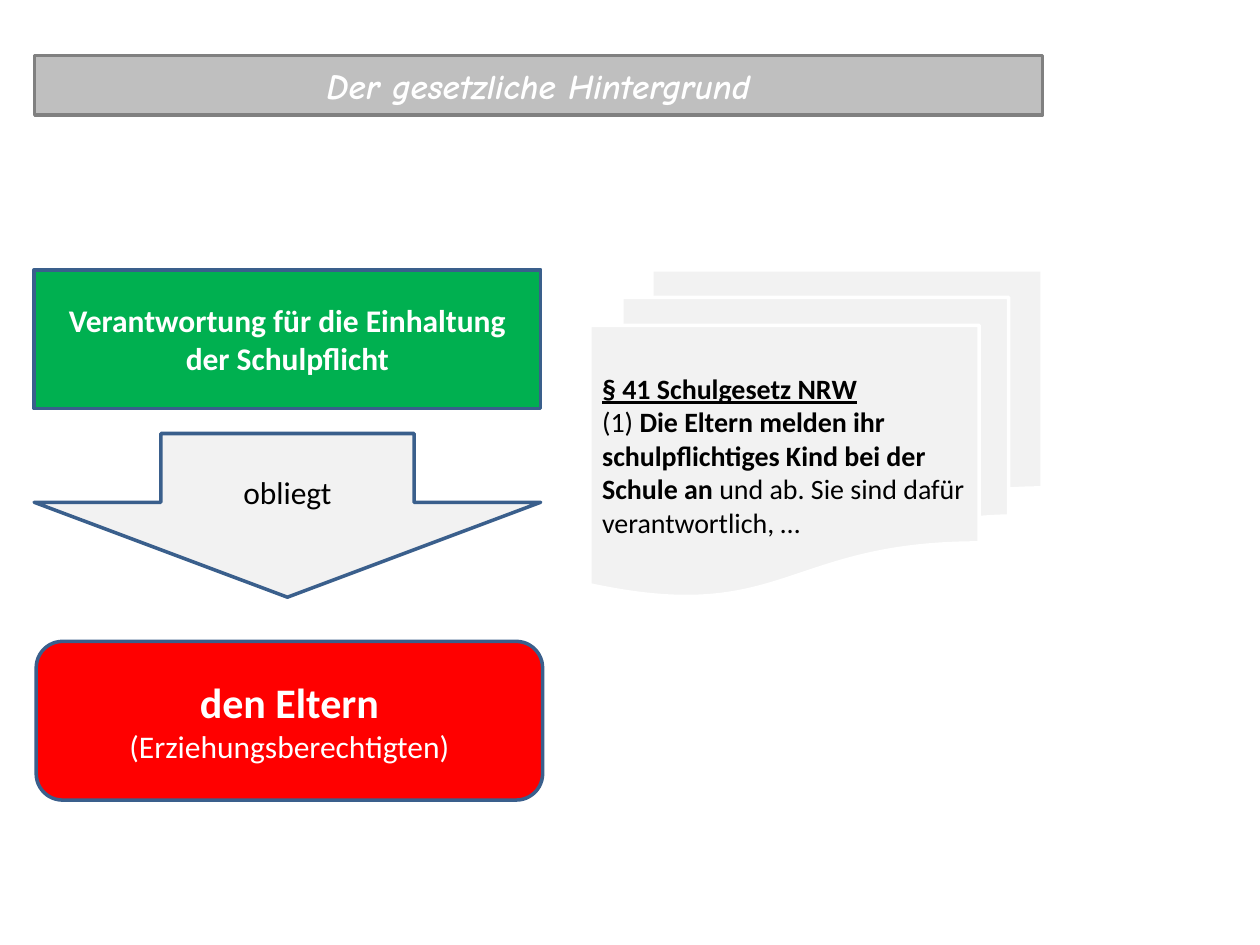
from pptx import Presentation, util as u
from pptx.dml import color
from pptx.enum import shapes, text

SHAPE = shapes.MSO_SHAPE
LEFT, CENTER = text.PP_ALIGN.LEFT, text.PP_ALIGN.CENTER


def rgb(value):
    """Turn a hex string into a colour."""
    return color.RGBColor.from_string(value)


class SlideBuilder:
    """Hold the style and the current slide."""

    font = "Calibri"
    line_width = u.Pt(2)
    border = "3A5F8C"
    pale = "F2F2F2"

    def __init__(self, slide):
        self.slide = slide

    def box(self, kind, left, top, width, height, fill, border=None):
        """Add a filled and outlined preset shape, measured in centimetres."""
        box = self.slide.shapes.add_shape(
            kind, u.Cm(left), u.Cm(top), u.Cm(width), u.Cm(height))
        box.shadow.inherit = False
        box.fill.solid()
        box.fill.fore_color.rgb = rgb(fill)
        box.line.color.rgb = rgb(border or self.border)
        box.line.width = self.line_width
        box.text_frame.word_wrap = True
        box.text_frame.vertical_anchor = text.MSO_ANCHOR.MIDDLE
        return box

    def label(self, box, lines, ink="FFFFFF", align=CENTER, font=None):
        """Label a box with lines made of (wording, size, styles) pieces."""
        frame = box.text_frame
        frame.text = "\n".join(line[0][0] for line in lines)
        for paragraph, line in zip(frame.paragraphs, lines):
            paragraph.alignment = align
            for wording, _, _ in line[1:]:
                paragraph.add_run().text = wording
            for run, (_, size, styles) in zip(paragraph.runs, line):
                run.font.name = font or self.font
                run.font.size = u.Pt(size)
                run.font.color.rgb = rgb(ink)
                run.font.bold = "b" in styles
                run.font.italic = "i" in styles
                run.font.underline = "u" in styles


def main():
    """Build the slide on the legal background."""
    deck = Presentation()
    deck.slide_width, deck.slide_height = u.Cm(25.4), u.Cm(19.05)
    builder = SlideBuilder(deck.slides.add_slide(deck.slide_layouts[6]))
    column_left, column_width = 0.69, 10.21

    title = builder.box(SHAPE.RECTANGLE, 0.7, 1.12, 20.32, 1.2, "BFBFBF", "808080")
    builder.label(title, [[("Der gesetzliche Hintergrund", 20, "bi")]], font="Comic Neue")

    law = builder.box(SHAPE.FLOWCHART_MULTIDOCUMENT, 11.89, 5.44, 9.12, 6.6,
                      builder.pale, "FFFFFF")
    builder.label(law, [
        [("§ 41 Schulgesetz NRW", 16, "bu")],
        [("(1) ", 16, ""),
         ("Die Eltern melden ihr schulpflichtiges Kind bei der Schule an ", 16, "b"),
         ("und ab. Sie sind dafür verantwortlich, …", 16, "")],
    ], ink="000000", align=LEFT)

    duty = builder.box(SHAPE.RECTANGLE, column_left, 5.44, column_width, 2.8, "00B050")
    builder.label(duty, [[("Verantwortung für die Einhaltung der Schulpflicht", 18, "b")]])

    arrow = builder.box(SHAPE.DOWN_ARROW, column_left, 8.74, column_width, 3.3, builder.pale)
    arrow.adjustments[0] = 0.5
    arrow.adjustments[1] = 0.58
    builder.label(arrow, [[("obliegt", 18, "")]], ink="000000")

    parents = builder.box(SHAPE.ROUNDED_RECTANGLE, 0.73, 12.93, column_width, 3.2, "FF0000")
    builder.label(parents, [[("den Eltern", 24, "b")],
                            [("(Erziehungsberechtigten)", 18, "")]])

    deck.save("out.pptx")


if __name__ == "__main__":
    main()
